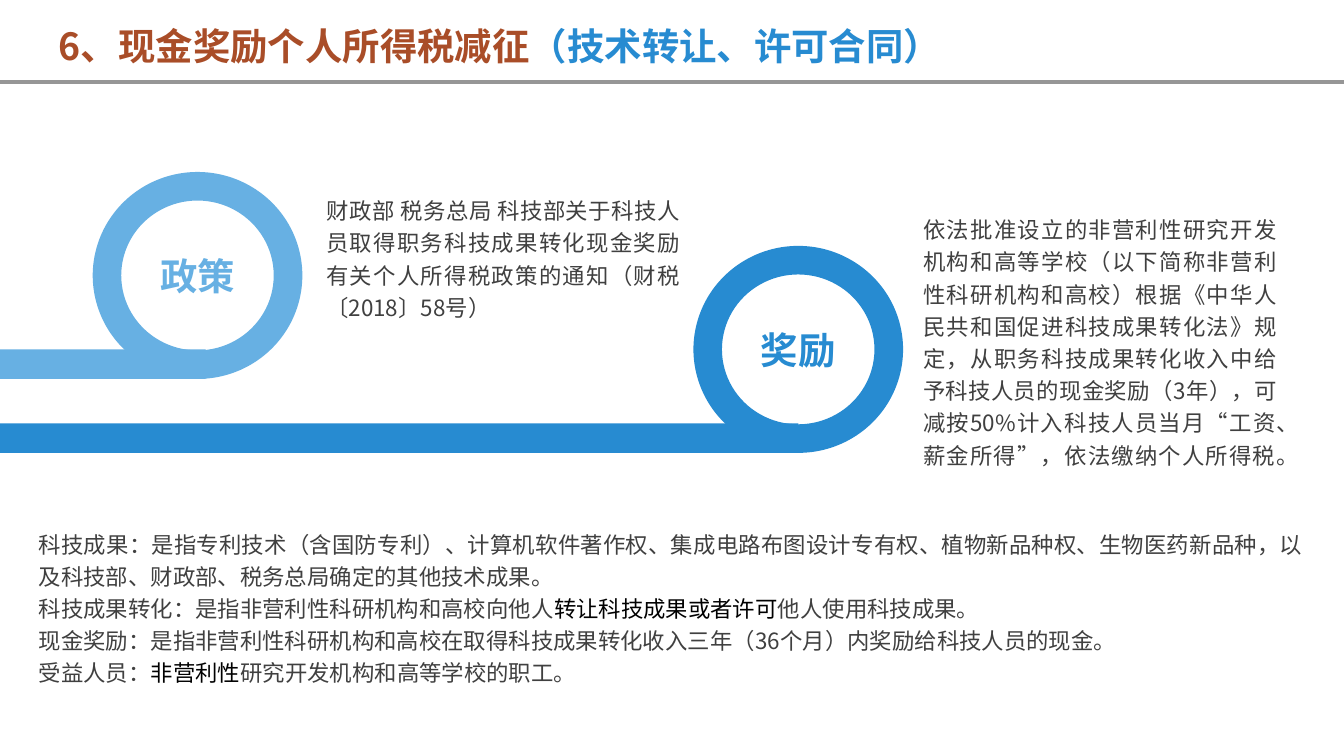
from dataclasses import dataclass

from lxml import etree
from pptx import Presentation
from pptx.dml.color import RGBColor
from pptx.enum.shapes import MSO_CONNECTOR, MSO_SHAPE as Shape
from pptx.enum.text import MSO_ANCHOR as Anchor, MSO_AUTO_SIZE as AutoSize, PP_ALIGN as Align
from pptx.oxml.ns import qn
from pptx.util import Inches, Pt

FONT = "Noto Sans CJK SC"
BROWN = RGBColor(0xA9, 0x4D, 0x28)
BLUE = RGBColor(0x27, 0x8B, 0xD1)
LIGHT_BLUE = RGBColor(0x67, 0xB0, 0xE3)
DARK = RGBColor(0x40, 0x40, 0x40)
BLACK = RGBColor(0, 0, 0)
GREY = RGBColor(0x96, 0x96, 0x96)

RING_W, RING_H, RING_ADJ = 1.56, 1.54, 0.138
LABEL_W, LABEL_H = 1.14, 1.12
BAR_H = 0.22


@dataclass
class Topic:
    label: str
    left: float
    top: float
    bar_right: float
    color: RGBColor
    text: str
    text_left: float
    text_top: float
    text_height: float


TOPICS = [
    Topic("政策", 0.69, 1.28, 1.53, LIGHT_BLUE,
          "财政部 税务总局 科技部关于科技人员取得职务科技成果转化现金奖励"
          "有关个人所得税政策的通知（财税〔2018〕58号）", 2.33, 1.38, 1.07),
    Topic("奖励", 5.16, 1.83, 5.94, BLUE,
          "依法批准设立的非营利性研究开发机构和高等学校（以下简称非营利性科研机构和高校）"
          "根据《中华人民共和国促进科技成果转化法》规定，从职务科技成果转化收入中给予"
          "科技人员的现金奖励（3年），可减按50%计入科技人员当月“工资、薪金所得”，"
          "依法缴纳个人所得税。", 6.77, 1.52, 2.04),
]

# Each paragraph is a list of (text, colour) runs
DEFINITIONS = [
    [("科技成果：是指专利技术（含国防专利）、计算机软件著作权、集成电路布图设计专有权、"
      "植物新品种权、生物医药新品种，以及科技部、财政部、税务总局确定的其他技术成果。", DARK)],
    [("科技成果转化：是指非营利性科研机构和高校向他人", DARK),
     ("转让科技成果或者许可", BLACK), ("他人使用科技成果。", DARK)],
    [("现金奖励：是指非营利性科研机构和高校在取得科技成果转化收入三年（36个月）内"
      "奖励给科技人员的现金。", DARK)],
    [("受益人员：", DARK), ("非营利性", BLACK), ("研究开发机构和高等学校的职工。", DARK)],
]
TITLE = [[("6、现金奖励个人所得税减征", BROWN), ("（技术转让、许可合同）", BLUE)]]


def write(tf, paragraphs, *, size=12, bold=False, align=Align.JUSTIFY, anchor=Anchor.TOP,
          spacing=1.2):
    tf.word_wrap = True
    tf.vertical_anchor = anchor
    for i, runs in enumerate(paragraphs):
        p = tf.paragraphs[0] if i == 0 else tf.add_paragraph()
        p.alignment = align
        p.line_spacing = spacing
        for text, color in runs:
            r = p.add_run()
            r.text = text
            r.font.size, r.font.bold, r.font.name = Pt(size), bold, FONT
            r.font.color.rgb = color
            etree.SubElement(r._r.get_or_add_rPr(), qn("a:ea")).set("typeface", FONT)


def add_text(s, left: float, top: float, width: float, height: float, paragraphs, **fmt):
    tf = s.shapes.add_textbox(Inches(left), Inches(top), Inches(width), Inches(height)).text_frame
    write(tf, paragraphs, **fmt)
    tf.auto_size = AutoSize.SHAPE_TO_FIT_TEXT


def add_plain(s, kind, left: float, top: float, width: float, height: float, color=None):
    sp = s.shapes.add_shape(kind, Inches(left), Inches(top), Inches(width), Inches(height))
    sp.shadow.inherit = False
    sp.line.fill.background()
    if color is None:
        sp.fill.background()
    else:
        sp.fill.solid()
        sp.fill.fore_color.rgb = color
    return sp


def add_topic(s, t: Topic):
    label = add_plain(s, Shape.OVAL, t.left + (RING_W - LABEL_W) / 2,
                      t.top + (RING_H - LABEL_H) / 2, LABEL_W, LABEL_H)
    write(label.text_frame, [[(t.label, t.color)]], size=20, bold=True,
          align=Align.CENTER, anchor=Anchor.MIDDLE, spacing=1.0)
    # The bar runs in from the slide edge, level with the foot of the ring
    add_plain(s, Shape.RECTANGLE, 0, t.top + RING_H - BAR_H, t.bar_right, BAR_H, t.color)
    ring = add_plain(s, Shape.DONUT, t.left, t.top, RING_W, RING_H, t.color)
    ring.adjustments[0] = RING_ADJ
    add_text(s, t.text_left, t.text_top, 2.83, t.text_height, [[(t.text, DARK)]])


def add_rule(s, y: float):
    rule = s.shapes.add_connector(MSO_CONNECTOR.STRAIGHT, 0, Inches(y), Inches(10), Inches(y))
    rule.line.color.rgb = GREY
    rule.line.width = Pt(1.75)
    etree.SubElement(rule._element.spPr, qn("a:effectLst"))


def main():
    prs = Presentation()
    # Widescreen, 16:9
    prs.slide_width = Inches(10)
    prs.slide_height = Inches(10) * 9 // 16
    s = prs.slides.add_slide(prs.slide_layouts[6])

    # Header rule
    add_rule(s, 0.61)

    # Rings with their explanations
    for topic in TOPICS:
        add_topic(s, topic)

    # Definitions and title
    add_text(s, 0.19, 3.86, 9.61, 1.31, DEFINITIONS)
    add_text(s, 0.34, 0.06, 8.47, 0.5, TITLE, size=20, bold=True, align=Align.LEFT)

    prs.save("out.pptx")


if __name__ == "__main__":
    main()
